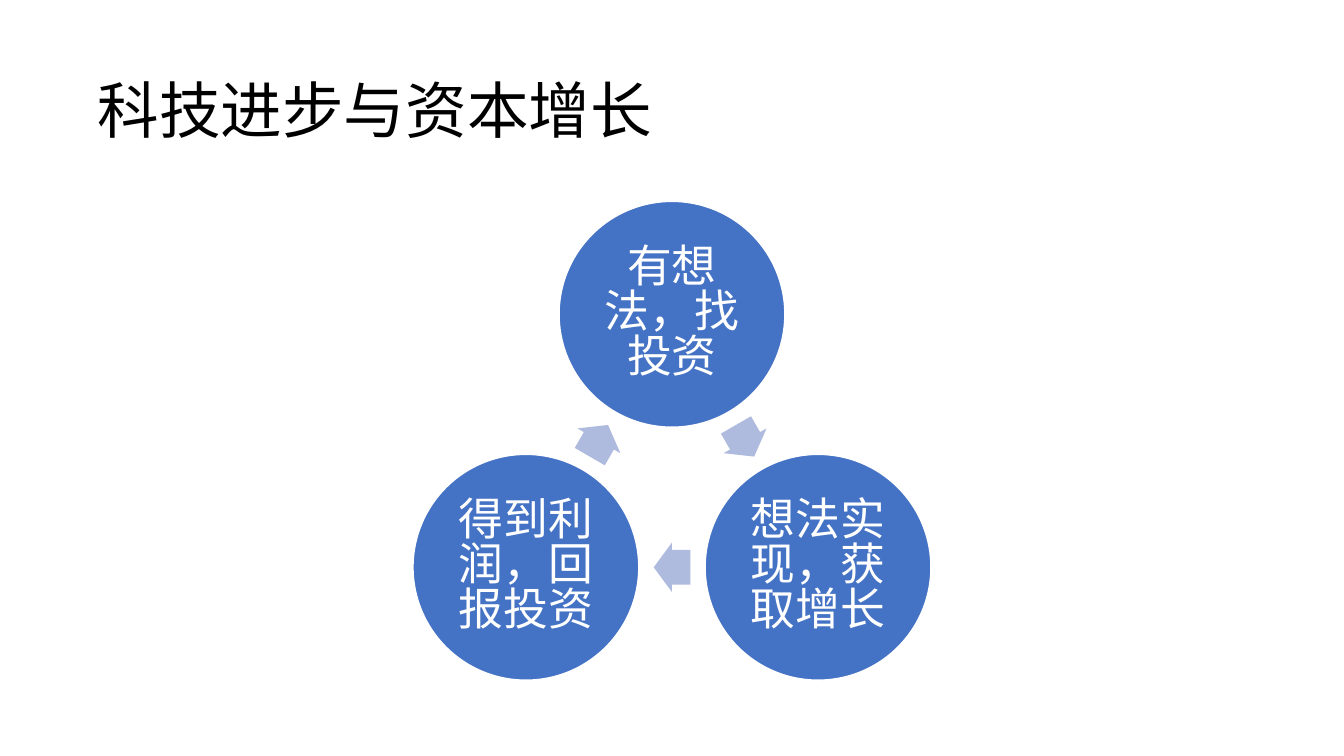
"""Build a slide with a three-step investment cycle."""
import math

from lxml import etree
from pptx import Presentation
from pptx.dml.color import RGBColor
from pptx.enum.shapes import MSO_SHAPE
from pptx.enum.text import MSO_ANCHOR, MSO_AUTO_SIZE, PP_ALIGN
from pptx.oxml.ns import qn
from pptx.util import Cm, Pt

TITLE = "科技进步与资本增长"
STEPS = ["有想法，找投资", "想法实现，获取增长", "得到利润，回报投资"]

FONT = "Noto Sans CJK SC"
BLACK = RGBColor(0x00, 0x00, 0x00)
WHITE = RGBColor(0xFF, 0xFF, 0xFF)
BLUE = RGBColor(0x44, 0x72, 0xC4)
PALE_BLUE = RGBColor(0xAE, 0xBA, 0xDE)
OVAL, ARROW = MSO_SHAPE.OVAL, MSO_SHAPE.RIGHT_ARROW
LEFT, CENTER = PP_ALIGN.LEFT, PP_ALIGN.CENTER
MIDDLE, NO_FIT = MSO_ANCHOR.MIDDLE, MSO_AUTO_SIZE.NONE

PAGE_WIDTH, PAGE_HEIGHT = 33.87, 19.05
CYCLE_X, CYCLE_Y, CYCLE_RADIUS = PAGE_WIDTH / 2, 12.17, 4.25
CIRCLE_SIZE = 5.69
ARROW_WIDTH, ARROW_HEIGHT = 0.92, 1.25
INSET = Cm(0.13)


def write(shape, text, size, color, align, spacing):
    """Put one formatted paragraph in a shape."""
    frame = shape.text_frame
    frame.word_wrap, frame.auto_size = True, NO_FIT
    frame.vertical_anchor = MIDDLE
    frame.margin_left = frame.margin_right = INSET
    frame.margin_top = frame.margin_bottom = INSET
    para = frame.paragraphs[0]
    para.alignment, para.line_spacing = align, spacing
    para._p.get_or_add_pPr().set("hangingPunct", "0")
    span = para.add_run()
    span.text = text
    span.font.size, span.font.name = Pt(size), FONT
    span.font.color.rgb = color
    etree.SubElement(span.font._element, qn("a:ea")).set("typeface", FONT)


def add_centered(page, kind, angle, radius, width, height, fill):
    """Add a filled shape centred on the cycle at an angle from the top."""
    turn = math.radians(angle)
    x = CYCLE_X + radius * math.sin(turn)
    y = CYCLE_Y - radius * math.cos(turn)
    shape = page.shapes.add_shape(
        kind, Cm(x - width / 2), Cm(y - height / 2), Cm(width), Cm(height))
    shape.shadow.inherit = False
    shape.fill.solid()
    shape.fill.fore_color.rgb = fill
    return shape


def main():
    """Draw the title and the cycle, then save the deck."""
    deck = Presentation()
    deck.slide_width, deck.slide_height = Cm(PAGE_WIDTH), Cm(PAGE_HEIGHT)
    page = deck.slides.add_slide(deck.slide_layouts[5])

    title = page.shapes.title
    title.left, title.top = Cm(2.33), Cm(1.01)
    title.width, title.height = Cm(29.21), Cm(3.68)
    write(title, TITLE, size=44, color=BLACK, align=LEFT, spacing=0.9)

    step_angle = 360 / len(STEPS)
    arrow_radius = CYCLE_RADIUS * math.cos(math.radians(step_angle / 2))
    for index, step in enumerate(STEPS):
        angle = index * step_angle
        circle = add_centered(page, OVAL, angle, CYCLE_RADIUS,
                              CIRCLE_SIZE, CIRCLE_SIZE, BLUE)
        circle.line.color.rgb, circle.line.width = WHITE, Pt(1)
        write(circle, step, size=32, color=WHITE, align=CENTER, spacing=0.83)

        middle_angle = angle + step_angle / 2
        arrow = add_centered(page, ARROW, middle_angle, arrow_radius,
                             ARROW_WIDTH, ARROW_HEIGHT, PALE_BLUE)
        arrow.line.fill.background()
        arrow.adjustments[0], arrow.adjustments[1] = 0.7, 0.5
        arrow.rotation = middle_angle

    deck.save("out.pptx")


if __name__ == "__main__":
    main()
